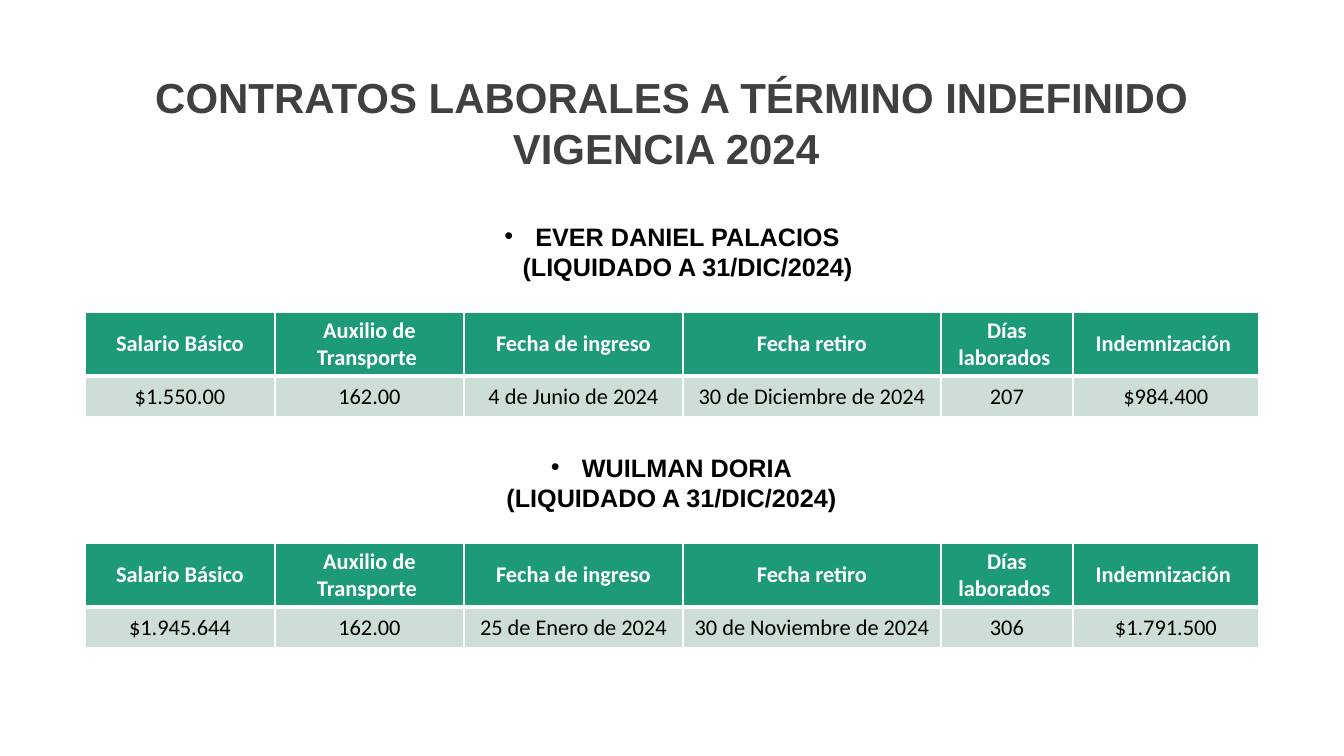
from dataclasses import dataclass

from lxml import etree
from pptx import Presentation
from pptx.dml.color import RGBColor
from pptx.enum import text
from pptx.oxml import ns
from pptx.util import Emu, Pt


@dataclass(frozen=True)
class Theme:
    """Colours, fonts and type sizes of the slide."""
    title: str = "404040"
    ink: str = "000000"
    paper: str = "FFFFFF"
    head: str = "1D9A78"
    body: str = "CDDED6"
    sans: str = "Arial"
    grid: str = "Calibri"
    big: int = 30
    mid: int = 18
    small: int = 16


THEME = Theme()
COLS = [190, 189, 219, 258, 132, 186]
ROWS = [64, 41]
HEADS = ["Salario Básico", "Auxilio de Transporte ", "Fecha de ingreso",
         "Fecha retiro", "Días laborados ", "Indemnización "]
EVER = ["$1.550.00", "162.00", "4 de Junio de 2024",
        "30 de Diciembre de 2024", "207", "$984.400"]
WUILMAN = ["$1.945.644", "162.00", "25 de Enero de 2024",
           "30 de Noviembre de 2024", "306", "$1.791.500"]


def px(n):
    """Turn pixels into EMU."""
    return Emu(round(n * 12192000 / 1344))


def style(para, face, size, color, bold=True):
    """Centre a paragraph and set its font."""
    para.alignment = text.PP_ALIGN.CENTER
    font = para.font
    font.name, font.size, font.bold = face, Pt(size), bold
    font.color.rgb = RGBColor.from_string(color)


def bullet(para):
    """Give a paragraph a hanging round bullet."""
    props = para._p.get_or_add_pPr()
    props.set("marL", str(px(31)))
    props.set("indent", str(-px(31)))
    etree.SubElement(props, ns.qn("a:buFont"), typeface=THEME.sans)
    etree.SubElement(props, ns.qn("a:buChar"), char="•")


def block(slide, box, lines, size, color, dot=False, drop=5, wrap=True):
    """Place centred bold lines in a box, the first one bulleted if asked."""
    frame = slide.shapes.add_textbox(*map(px, box)).text_frame
    frame.word_wrap = wrap
    frame.margin_top = px(drop)
    for i, line in enumerate(lines):
        para = frame.add_paragraph() if i else frame.paragraphs[0]
        para.text = line
        if dot and i == 0:
            bullet(para)
        style(para, THEME.sans, size, color)


def edges(cell, widths):
    """Draw white cell borders, widths in points by side."""
    props = cell._tc.get_or_add_tcPr()
    for side, width in widths.items():
        line = etree.SubElement(props, ns.qn(f"a:ln{side}"), w=str(Pt(width)))
        fill = etree.SubElement(line, ns.qn("a:solidFill"))
        etree.SubElement(fill, ns.qn("a:srgbClr"), val=THEME.paper)


def grid(slide, left, top, values):
    """Place the header row and one row of contract values."""
    table = slide.shapes.add_table(
        len(ROWS), len(COLS), px(left), px(top),
        px(sum(COLS)), px(sum(ROWS))).table
    table.horz_banding = False
    for col, width in zip(table.columns, COLS):
        col.width = px(width)
    looks = [(THEME.head, THEME.paper, True, 1, 3),
             (THEME.body, THEME.ink, False, 3, 1)]
    for r, (words, look) in enumerate(zip([HEADS, values], looks)):
        back, color, bold, above, below = look
        table.rows[r].height = px(ROWS[r])
        for c, word in enumerate(words):
            cell = table.cell(r, c)
            cell.text = word
            cell.vertical_anchor = text.MSO_ANCHOR.MIDDLE
            edges(cell, {"L": 1, "R": 1, "T": above, "B": below})
            cell.fill.solid()
            cell.fill.fore_color.rgb = RGBColor.from_string(back)
            style(cell.text_frame.paragraphs[0], THEME.grid, THEME.small,
                  color, bold)


def main():
    """Build and save the slide."""
    deck = Presentation()
    deck.slide_width, deck.slide_height = px(1344), px(756)
    slide = deck.slides.add_slide(deck.slide_layouts[6])
    block(slide, (140, 67, 1064, 112),
          ["CONTRATOS LABORALES A TÉRMINO INDEFINIDO", "VIGENCIA 2024 "],
          THEME.big, THEME.title, wrap=False)
    block(slide, (432, 186, 480, 163),
          ["EVER DANIEL PALACIOS (LIQUIDADO A 31/DIC/2024)"],
          THEME.mid, THEME.ink, dot=True, drop=35)
    block(slide, (416, 447, 511, 194),
          ["WUILMAN DORIA", "(LIQUIDADO A 31/DIC/2024)"],
          THEME.mid, THEME.ink, dot=True)
    grid(slide, 85, 312, EVER)
    grid(slide, 85, 543, WUILMAN)
    deck.save("out.pptx")


if __name__ == "__main__":
    main()
